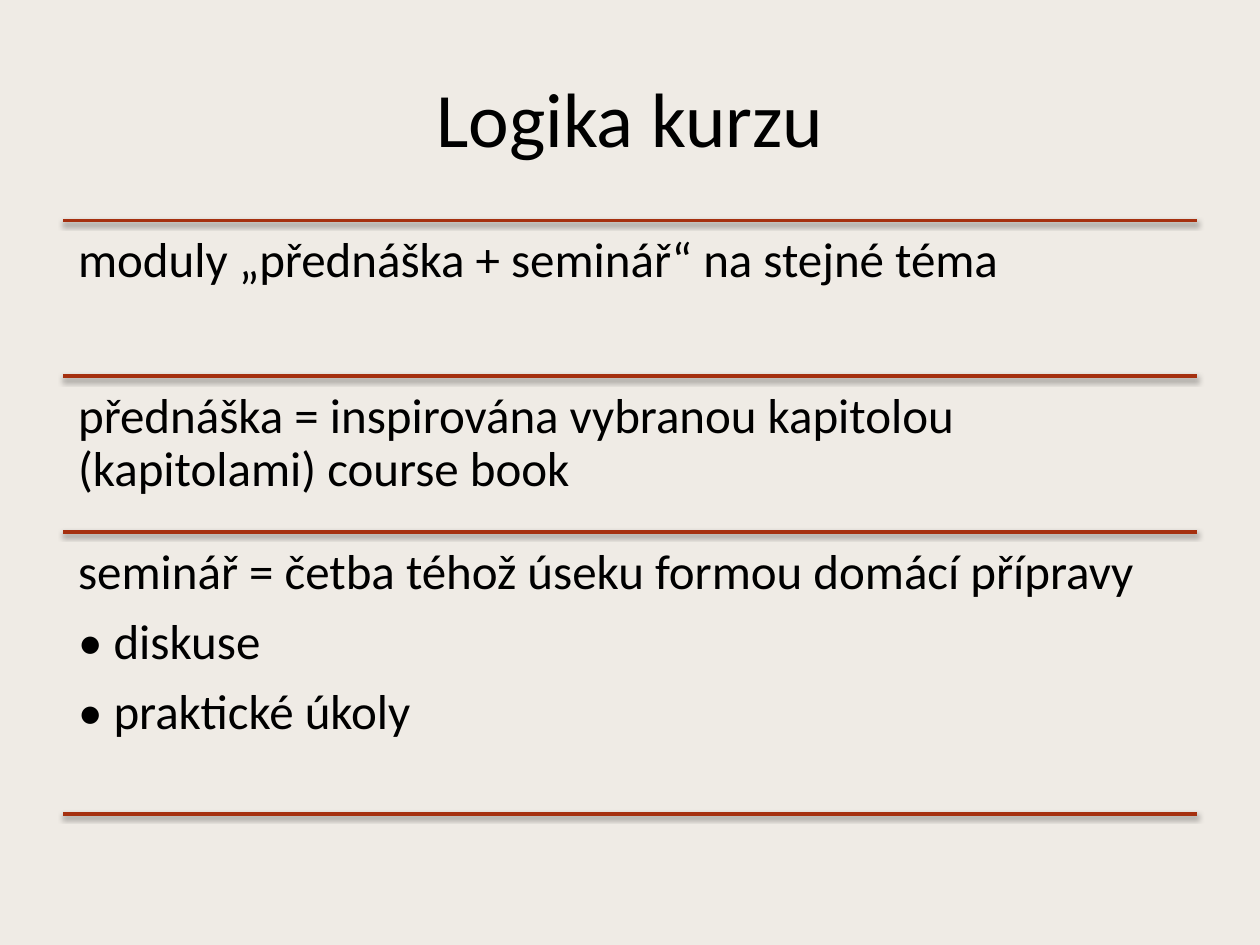
import dataclasses

import lxml.etree
import pptx
import pptx.dml.color
import pptx.enum.shapes
import pptx.enum.text
import pptx.oxml.ns
import pptx.util


@dataclasses.dataclass(frozen=True)
class Theme:
    background: str = "EFEBE5"
    text: str = "000000"
    rule: str = "A5300F"
    shadow: str = "000000"
    font: str = "Calibri"
    title_size: float = 44
    body_size: float = 28
    rule_width: float = 2


THEME = Theme()
SLIDE_WIDTH, SLIDE_HEIGHT = 10, 7.5
MARGIN = 0.05 * SLIDE_WIDTH
CONTENT_WIDTH = SLIDE_WIDTH - 2 * MARGIN
TITLE_TOP = 0.04 * SLIDE_HEIGHT
TITLE_HEIGHT = SLIDE_HEIGHT / 6
ROWS_TOP = 1.75
ROW_HEIGHT = 1.236
CLOSING_RULE_TOP = 6.46
ROW_INSET = 0.12

TITLE = "Logika kurzu"
ROWS = [
    ["moduly „přednáška + seminář“ na stejné téma"],
    ["přednáška = inspirována vybranou kapitolou (kapitolami) course book"],
    [
        "seminář = četba téhož úseku formou domácí přípravy",
        "• diskuse",
        "• praktické úkoly",
    ],
]


def color(value):
    return pptx.dml.color.RGBColor.from_string(value)


def add_text(slide, top, height, lines, size):
    shape = slide.shapes.add_textbox(
        *map(pptx.util.Inches, (MARGIN, top, CONTENT_WIDTH, height))
    )
    frame = shape.text_frame
    frame.word_wrap = True
    frame.text = "\n".join(lines)
    for paragraph in frame.paragraphs:
        paragraph.font.name = THEME.font
        paragraph.font.size = pptx.util.Pt(size)
        paragraph.font.color.rgb = color(THEME.text)
    return frame


def add_title(slide):
    frame = add_text(slide, TITLE_TOP, TITLE_HEIGHT, [TITLE], THEME.title_size)
    frame.vertical_anchor = pptx.enum.text.MSO_ANCHOR.MIDDLE
    frame.paragraphs[0].alignment = pptx.enum.text.PP_ALIGN.CENTER


def add_row(slide, top, lines):
    frame = add_text(slide, top, ROW_HEIGHT, lines, THEME.body_size)
    inset = pptx.util.Inches(ROW_INSET)
    frame.margin_left = frame.margin_right = inset
    frame.margin_top = frame.margin_bottom = inset
    for paragraph in frame.paragraphs:
        paragraph.line_spacing = 0.9
        paragraph.space_after = pptx.util.Pt(0.35 * THEME.body_size)


def add_shadow(connector):
    qualified = pptx.oxml.ns.qn
    properties = connector._element.spPr
    effects = lxml.etree.SubElement(properties, qualified("a:effectLst"))
    shadow = lxml.etree.SubElement(
        effects,
        qualified("a:outerShdw"),
        blurRad=str(pptx.util.Pt(3.1)),
        dist=str(pptx.util.Pt(1.6)),
        dir="5400000",
        rotWithShape="0",
    )
    shade = lxml.etree.SubElement(shadow, qualified("a:srgbClr"), val=THEME.shadow)
    lxml.etree.SubElement(shade, qualified("a:alpha"), val="38000")


def add_rule(slide, top):
    connector = slide.shapes.add_connector(
        pptx.enum.shapes.MSO_CONNECTOR.STRAIGHT,
        *map(pptx.util.Inches, (MARGIN, top, MARGIN + CONTENT_WIDTH, top)),
    )
    connector.line.color.rgb = color(THEME.rule)
    connector.line.width = pptx.util.Pt(THEME.rule_width)
    add_shadow(connector)


def main():
    presentation = pptx.Presentation()
    presentation.slide_width = pptx.util.Inches(SLIDE_WIDTH)
    presentation.slide_height = pptx.util.Inches(SLIDE_HEIGHT)
    slide = presentation.slides.add_slide(presentation.slide_layouts[6])
    slide.background.fill.solid()
    slide.background.fill.fore_color.rgb = color(THEME.background)

    add_title(slide)
    for index, lines in enumerate(ROWS):
        top = ROWS_TOP + index * ROW_HEIGHT
        add_rule(slide, top)
        add_row(slide, top, lines)
    add_rule(slide, CLOSING_RULE_TOP)

    presentation.save("out.pptx")


if __name__ == "__main__":
    main()
